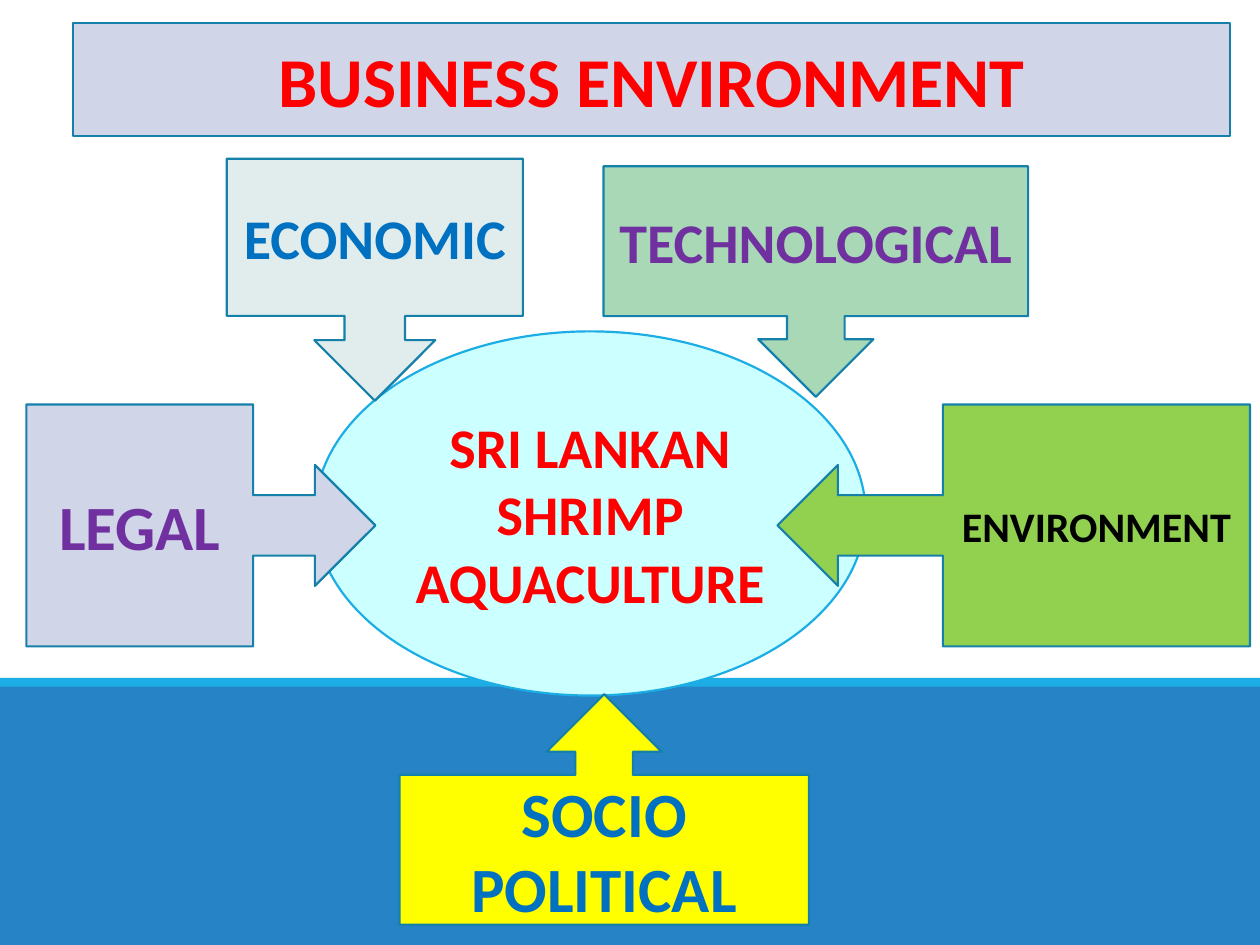
from dataclasses import dataclass

from pptx import Presentation
from pptx.dml.color import RGBColor
from pptx.enum.shapes import MSO_SHAPE
from pptx.enum.text import MSO_ANCHOR, PP_ALIGN
from pptx.util import Inches, Pt

RECTANGLE = MSO_SHAPE.RECTANGLE
OVAL = MSO_SHAPE.OVAL
RIGHT_CALLOUT = MSO_SHAPE.RIGHT_ARROW_CALLOUT
LEFT_CALLOUT = MSO_SHAPE.LEFT_ARROW_CALLOUT
DOWN_CALLOUT = MSO_SHAPE.DOWN_ARROW_CALLOUT
UP_CALLOUT = MSO_SHAPE.UP_ARROW_CALLOUT
MIDDLE = MSO_ANCHOR.MIDDLE
CENTER = PP_ALIGN.CENTER


@dataclass(frozen=True)
class Theme:
    font: str = "Calibri"
    title_size: int = 40
    large_size: int = 36
    medium_size: int = 32
    small_size: int = 24
    line_width: float = 1.25
    band: str = "2683C6"
    accent: str = "1CADE4"
    outline: str = "1580A9"
    lavender: str = "D0D5E7"
    aqua: str = "CCFFFF"
    mist: str = "E0EDEC"
    mint: str = "A9D8B7"
    green: str = "92D050"
    yellow: str = "FFFF00"
    red: str = "FF0000"
    purple: str = "7030A0"
    blue: str = "0070C0"
    black: str = "000000"


THEME = Theme()


def add_filled_shape(slide, preset, box, fill, line=None):
    """Add a shape at box (left, top, width, height in inches)."""
    shape = slide.shapes.add_shape(preset, *map(Inches, box))
    shape.shadow.inherit = False
    shape.fill.solid()
    shape.fill.fore_color.rgb = RGBColor.from_string(fill)
    if line:
        shape.line.color.rgb = RGBColor.from_string(line)
        shape.line.width = Pt(THEME.line_width)
    else:
        shape.line.fill.background()
    return shape


def add_label(shape, text, size, color):
    frame = shape.text_frame
    frame.word_wrap = True
    frame.vertical_anchor = MIDDLE
    frame.text = text
    for paragraph in frame.paragraphs:
        paragraph.alignment = CENTER
        for run in paragraph.runs:
            run.font.name = THEME.font
            run.font.size = Pt(size)
            run.font.bold = True
            run.font.color.rgb = RGBColor.from_string(color)


def add_footer_bands(slide):
    add_filled_shape(slide, RECTANGLE, (0, 5.42, 10, 2.08), THEME.band)
    add_filled_shape(slide, RECTANGLE, (0, 5.38, 10, 0.07), THEME.accent)


def add_industry(slide):
    industry = add_filled_shape(slide, OVAL, (2.5, 2.63, 4.37, 2.89),
                                THEME.aqua, THEME.accent)
    add_label(industry, "SRI LANKAN\nSHRIMP AQUACULTURE",
              THEME.medium_size, THEME.red)


def add_title(slide):
    title = add_filled_shape(slide, RECTANGLE, (0.58, 0.18, 9.18, 0.9),
                             THEME.lavender, THEME.outline)
    add_label(title, "BUSINESS ENVIRONMENT", THEME.title_size, THEME.red)


def add_factors(slide):
    """Add the callouts that point at the industry in the centre."""
    factors = [
        ("LEGAL", RIGHT_CALLOUT, (0.21, 3.21, 2.77, 1.92),
         THEME.lavender, THEME.large_size, THEME.purple),
        ("ENVIRONMENT", LEFT_CALLOUT, (6.17, 3.21, 3.75, 1.92),
         THEME.green, THEME.small_size, THEME.black),
        ("ECONOMIC", DOWN_CALLOUT, (1.8, 1.26, 2.35, 1.92),
         THEME.mist, THEME.medium_size, THEME.blue),
        ("TECHNOLOGICAL", DOWN_CALLOUT, (4.79, 1.32, 3.37, 1.83),
         THEME.mint, THEME.medium_size, THEME.purple),
        ("SOCIO POLITICAL", UP_CALLOUT, (3.17, 5.51, 3.25, 1.83),
         THEME.yellow, THEME.large_size, THEME.blue),
    ]
    for text, preset, box, fill, size, color in factors:
        callout = add_filled_shape(slide, preset, box, fill, THEME.outline)
        add_label(callout, text, size, color)


def main():
    presentation = Presentation()
    presentation.slide_width = Inches(10)
    presentation.slide_height = Inches(7.5)
    slide = presentation.slides.add_slide(presentation.slide_layouts[6])
    add_footer_bands(slide)
    add_industry(slide)
    add_title(slide)
    add_factors(slide)
    presentation.save("out.pptx")


if __name__ == "__main__":
    main()
